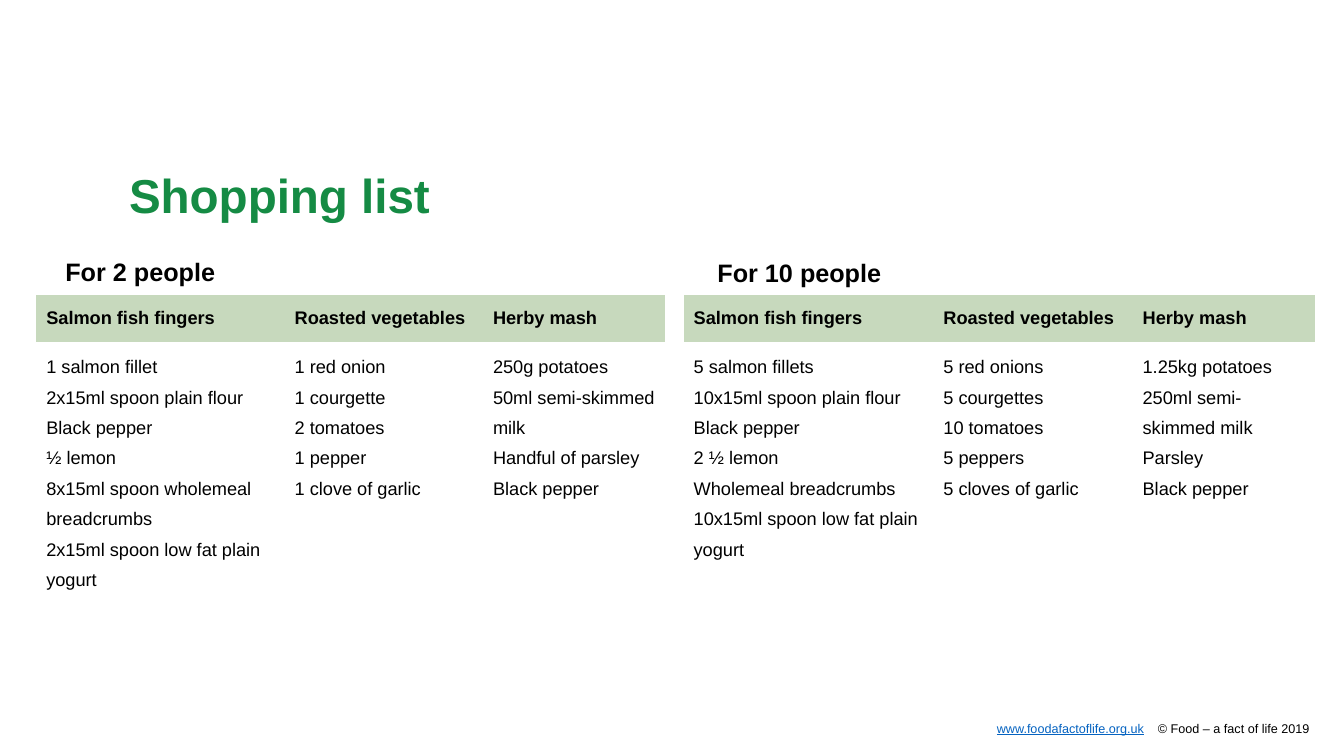
from dataclasses import dataclass

from pptx import Presentation
from pptx.dml.color import RGBColor
from pptx.enum.text import MSO_ANCHOR, PP_ALIGN
from pptx.oxml.ns import qn
from pptx.slide import Slide
from pptx.table import _Cell
from pptx.text.text import Font, TextFrame
from pptx.util import Pt


@dataclass(frozen=True)
class Theme:
    font: str = "Arial"
    black: RGBColor = RGBColor(0x00, 0x00, 0x00)
    green: RGBColor = RGBColor(0x15, 0x8B, 0x44)
    header_green: RGBColor = RGBColor(0xC7, 0xD9, 0xBD)
    link_blue: RGBColor = RGBColor(0x05, 0x63, 0xC1)
    title_size: float = 34
    heading_size: float = 18
    table_size: float = 13
    footer_size: float = 9


@dataclass(frozen=True)
class Box:
    left: float
    top: float
    width: float
    height: float


@dataclass(frozen=True)
class ShoppingList:
    heading: str
    heading_box: Box
    table_left: float
    column_widths: tuple[float, ...]
    ingredients: tuple[tuple[str, ...], ...]


THEME = Theme()
DISHES = ("Salmon fish fingers", "Roasted vegetables", "Herby mash")
TABLE_TOP = 211
ROW_HEIGHTS = (33.2, 257)
NO_STYLE_NO_GRID = "{2D5ABB26-0587-4C30-8999-92F81FD0307C}"

SHOPPING_LISTS = (
    ShoppingList(
        "For 2 people", Box(39.6, 179.2, 294.5, 29), 25.9, (177.4, 141.7, 129.8),
        (
            ("1 salmon fillet", "2x15ml spoon plain flour", "Black pepper", "½ lemon",
             "8x15ml spoon wholemeal breadcrumbs", "2x15ml spoon low fat plain yogurt"),
            ("1 red onion", "1 courgette", "2 tomatoes", "1 pepper", "1 clove of garlic"),
            ("250g potatoes", "50ml semi-skimmed milk", "Handful of parsley", "Black pepper"),
        ),
    ),
    ShoppingList(
        "For 10 people", Box(505.4, 180.3, 294.5, 29), 488.3, (178.4, 142.3, 130.2),
        (
            ("5 salmon fillets", "10x15ml spoon plain flour", "Black pepper", "2 ½ lemon",
             "Wholemeal breadcrumbs", "10x15ml spoon low fat plain yogurt"),
            ("5 red onions", "5 courgettes", "10 tomatoes", "5 peppers", "5 cloves of garlic"),
            ("1.25kg potatoes", "250ml semi-skimmed milk", "Parsley", "Black pepper"),
        ),
    ),
)


def style_font(font: Font, size: float, color: RGBColor, bold: bool = False) -> None:
    font.name = THEME.font
    font.size = Pt(size)
    font.bold = bold
    font.color.rgb = color


def add_text_frame(slide: Slide, box: Box, inset: bool = True) -> TextFrame:
    """Add a wrapping text box, with the default margins only if inset."""
    shape = slide.shapes.add_textbox(
        Pt(box.left), Pt(box.top), Pt(box.width), Pt(box.height))
    frame = shape.text_frame
    frame.word_wrap = True
    if not inset:
        frame.margin_left = frame.margin_right = Pt(0)
        frame.margin_top = frame.margin_bottom = Pt(0)
    return frame


def add_title(slide: Slide) -> None:
    frame = add_text_frame(slide, Box(92.2, 123.1, 765.4, 56.9), inset=False)
    frame.text = "Shopping list"
    paragraph = frame.paragraphs[0]
    paragraph.line_spacing = 0.9
    style_font(paragraph.runs[0].font, THEME.title_size, THEME.green, bold=True)


def fill_cell(cell: _Cell, lines: tuple[str, ...], is_header: bool) -> None:
    cell.text_frame.text = "\n".join(lines)
    if is_header:
        cell.fill.solid()
        cell.fill.fore_color.rgb = THEME.header_green
        cell.vertical_anchor = MSO_ANCHOR.MIDDLE
    else:
        cell.fill.background()
    for paragraph in cell.text_frame.paragraphs:
        if not is_header:
            paragraph.line_spacing = 1.5
        style_font(paragraph.runs[0].font, THEME.table_size, THEME.black, is_header)


def add_shopping_list(slide: Slide, shopping_list: ShoppingList) -> None:
    frame = add_text_frame(slide, shopping_list.heading_box)
    frame.text = shopping_list.heading
    style_font(frame.paragraphs[0].runs[0].font, THEME.heading_size, THEME.black, bold=True)

    widths = shopping_list.column_widths
    table = slide.shapes.add_table(
        len(ROW_HEIGHTS), len(widths), Pt(shopping_list.table_left), Pt(TABLE_TOP),
        Pt(sum(widths)), Pt(sum(ROW_HEIGHTS))).table
    table.horz_banding = False
    table._tbl.tblPr.find(qn("a:tableStyleId")).text = NO_STYLE_NO_GRID
    for row, height in zip(table.rows, ROW_HEIGHTS):
        row.height = Pt(height)
    for index, width in enumerate(widths):
        table.columns[index].width = Pt(width)
        fill_cell(table.cell(0, index), (DISHES[index],), is_header=True)
        fill_cell(table.cell(1, index), shopping_list.ingredients[index], is_header=False)


def add_footer(slide: Slide) -> None:
    frame = add_text_frame(slide, Box(90.7, 514.8, 844.6, 10.8), inset=False)
    paragraph = frame.paragraphs[0]
    paragraph.alignment = PP_ALIGN.RIGHT
    address, gap, copyright_line = (paragraph.add_run() for _ in range(3))
    address.text = "www.foodafactoflife.org.uk"
    gap.text = " "
    copyright_line.text = "© Food – a fact of life 2019"
    style_font(address.font, THEME.footer_size, THEME.link_blue)
    address.font.underline = True
    for run in (gap, copyright_line):
        style_font(run.font, THEME.footer_size, THEME.black)
    # Character spacing, in hundredths of a point, widens the gap.
    gap._r.get_or_add_rPr().set("spc", "750")


def main() -> None:
    presentation = Presentation()
    presentation.slide_width = Pt(960)
    presentation.slide_height = Pt(540)
    slide = presentation.slides.add_slide(presentation.slide_layouts[6])
    add_footer(slide)
    add_title(slide)
    for shopping_list in SHOPPING_LISTS:
        add_shopping_list(slide, shopping_list)
    presentation.save("out.pptx")


if __name__ == "__main__":
    main()
